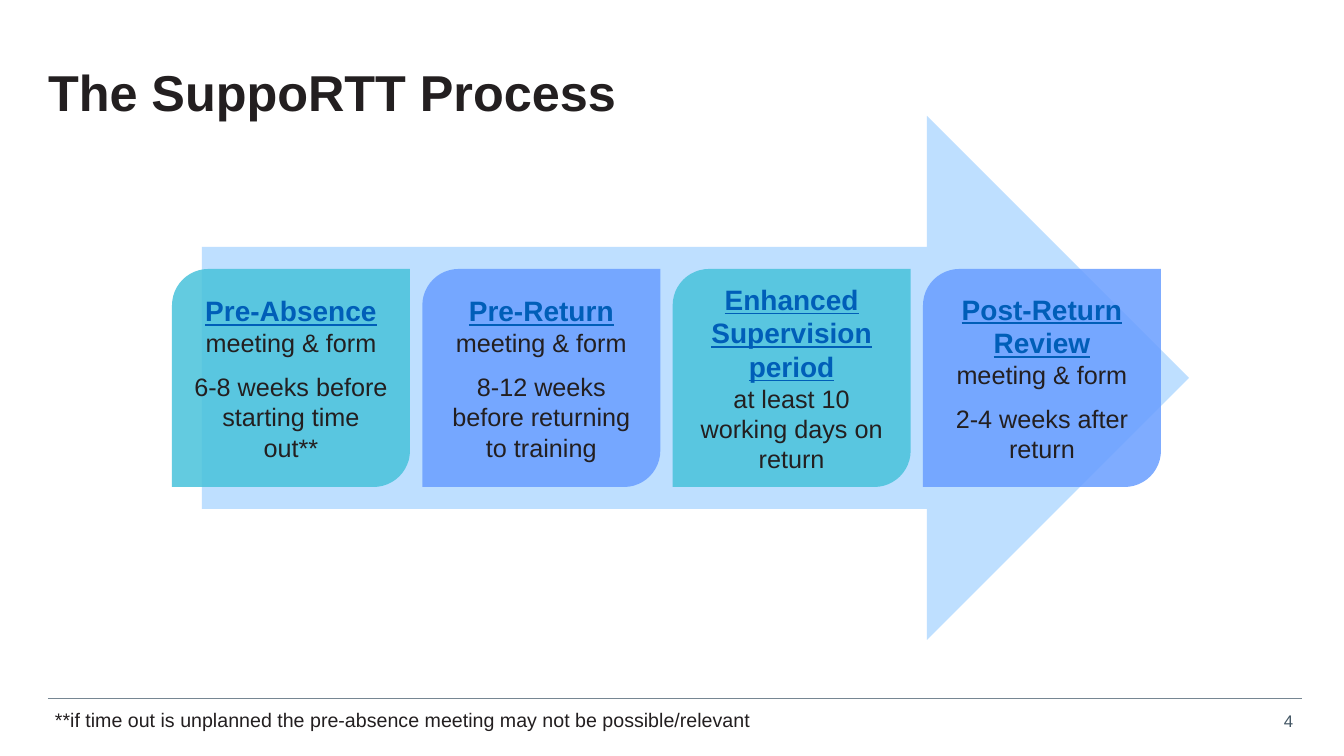
"""Build the SuppoRTT process slide: four stage cards on a wide arrow."""
from lxml.etree import SubElement
from pptx import Presentation
from pptx.dml.color import RGBColor
from pptx.enum.shapes import MSO_CONNECTOR as LINE, MSO_SHAPE as SHAPE
from pptx.enum.text import MSO_ANCHOR as ANCHOR, MSO_AUTO_SIZE as FIT, PP_ALIGN as ALIGN
from pptx.oxml.ns import qn
from pptx.util import Emu, Pt

SCALE = 914400 / 100.8
INK = RGBColor(0x23, 0x1F, 0x20)
LINK = RGBColor(0x00, 0x5E, 0xB8)
SKY = RGBColor(0xBE, 0xDF, 0xFF)
TEAL = RGBColor(0x48, 0xC2, 0xDB)
BLUE = RGBColor(0x69, 0x9E, 0xFF)
RULE = RGBColor(0x76, 0x86, 0x92)
SLATE = RGBColor(0x42, 0x55, 0x63)

STAGES = [
    ("Pre-Absence", "meeting & form", "6-8 weeks before starting time out**"),
    ("Pre-Return", "meeting & form", "8-12 weeks before returning to training"),
    ("Enhanced Supervision period", "at least 10 working days on return"),
    ("Post-Return Review", "meeting & form", "2-4 weeks after return"),
]


def px(*nums):
    return [Emu(round(num * SCALE)) for num in nums]


def style(para, size, color, align, bold=False):
    para.alignment = align
    for run in para.runs:
        font = run.font
        font.name = "Arial"
        font.size = Pt(size)
        font.bold = bold
        font.color.rgb = color


deck = Presentation()
deck.slide_width, deck.slide_height = px(1344, 756)
slide = deck.slides.add_slide(deck.slide_layouts[5])
shapes = slide.shapes

title = shapes.title
title.left, title.top, title.width, title.height = px(48, 47, 1257, 96)
frame = title.text_frame
frame.text = "The SuppoRTT Process"
frame.auto_size = FIT.NONE
frame.vertical_anchor = ANCHOR.MIDDLE
frame.margin_left = frame.margin_right = frame.margin_top = frame.margin_bottom = 0
frame.paragraphs[0].line_spacing = 0.9
style(frame.paragraphs[0], 36, INK, ALIGN.LEFT, True)

arrow = shapes.add_shape(SHAPE.RIGHT_ARROW, *px(202, 116, 987, 524))
arrow.shadow.inherit = False
arrow.fill.solid()
arrow.fill.fore_color.rgb = SKY
arrow.line.fill.background()

start, end, width = 172, 1161, 238
step = (end - start - width) / (len(STAGES) - 1)
for num, lines in enumerate(STAGES):
    card = shapes.add_shape(SHAPE.ROUND_2_DIAG_RECTANGLE,
                            *px(start + num * step, 269, width, 218))
    card.shadow.inherit = False
    card.fill.solid()
    card.fill.fore_color.rgb = BLUE if num % 2 else TEAL
    color = card.fill._xPr.find(qn("a:solidFill"))[0]
    SubElement(color, qn("a:alpha")).set("val", "85000")
    card.line.fill.background()
    frame = card.text_frame
    frame.word_wrap = True
    frame.vertical_anchor = ANCHOR.MIDDLE
    frame.text = "\n".join(lines)
    head, *body = frame.paragraphs
    style(head, 20, LINK, ALIGN.CENTER, True)
    head.runs[0].font.underline = True
    for para in body:
        style(para, 18, INK, ALIGN.CENTER)
    for para in body[1:]:
        para.space_before = Pt(10)

rule = shapes.add_connector(LINE.STRAIGHT, *px(48, 698, 1302, 698))
rule.line.color.rgb = RULE
rule.line.width = Pt(0.5)
SubElement(rule._element.spPr, qn("a:effectLst"))

NOTES = [
    ("**if time out is unplanned the pre-absence meeting may not be possible/relevant",
     (45, 703, 742, 34), 14, INK, ALIGN.LEFT),
    ("4", (1262, 706, 41, 30), 12, SLATE, ALIGN.RIGHT),
]
for text, place, size, color, align in NOTES:
    box = shapes.add_textbox(*px(*place))
    box.text_frame.word_wrap = True
    box.text_frame.text = text
    style(box.text_frame.paragraphs[0], size, color, align)

deck.save("out.pptx")
